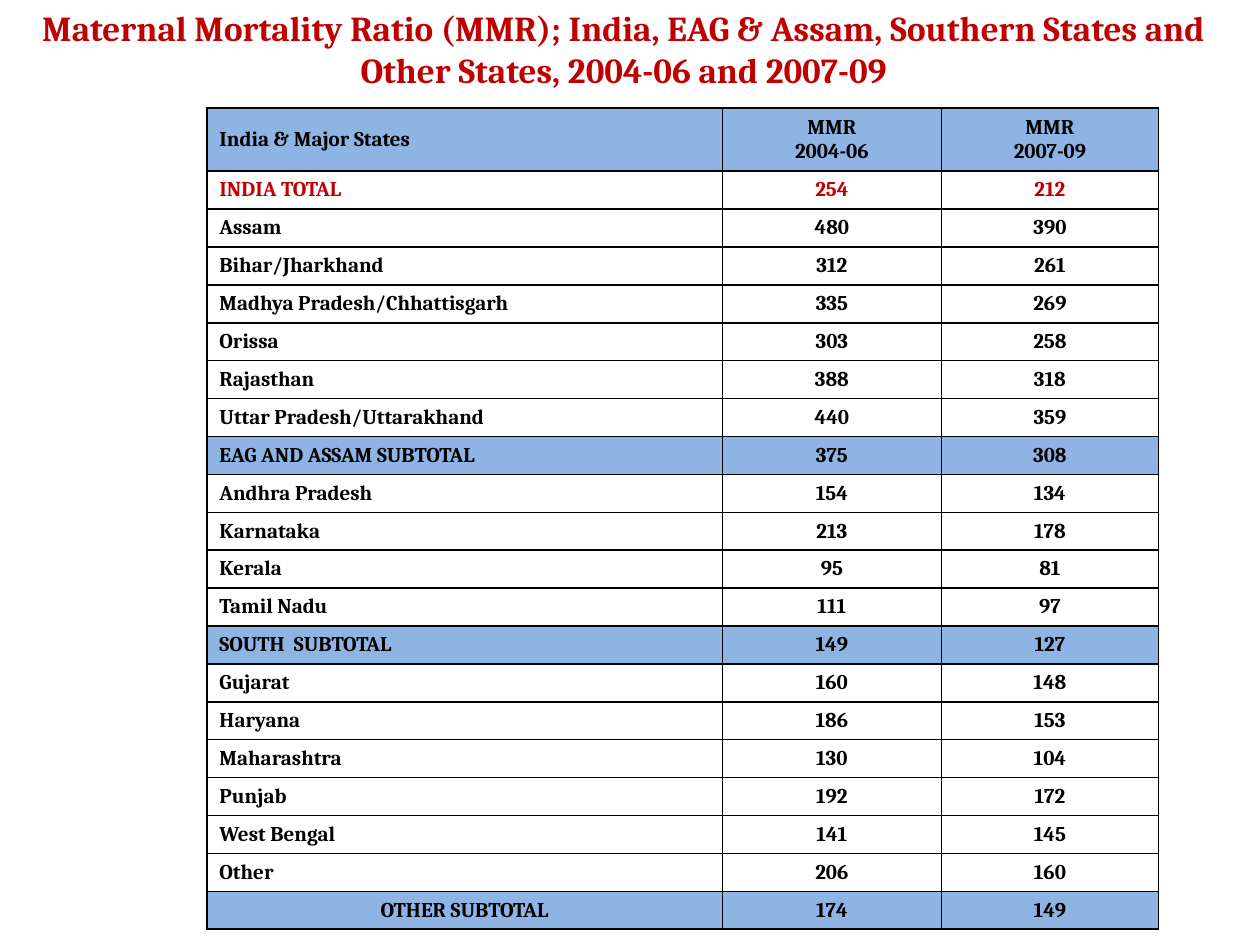
from dataclasses import dataclass

from lxml import etree
from pptx import Presentation
from pptx.dml.color import RGBColor
from pptx.enum import text
from pptx.oxml import ns
from pptx.util import Cm, Pt


@dataclass(frozen=True)
class Theme:
    font: str = "Cambria"
    title_size: int = 20
    cell_size: int = 12
    red: str = "C00000"
    ink: str = "000000"
    band: str = "8DB4E3"
    border: str = "000000"
    border_width: int = 1


@dataclass(frozen=True)
class Row:
    label: str
    earlier: str
    later: str
    banded: bool = False
    color: str = Theme.ink
    label_align: text.PP_ALIGN = text.PP_ALIGN.LEFT


THEME = Theme()
TITLE = ("Maternal Mortality Ratio (MMR); India, EAG & Assam, Southern States "
         "and Other States, 2004-06 and 2007-09")
ROWS = [
    Row("India & Major States", "MMR\n2004-06", "MMR\n2007-09", banded=True),
    Row("INDIA TOTAL", "254", "212", color=THEME.red),
    Row("Assam", "480", "390"),
    Row("Bihar/Jharkhand", "312", "261"),
    Row("Madhya Pradesh/Chhattisgarh", "335", "269"),
    Row("Orissa", "303", "258"),
    Row("Rajasthan", "388", "318"),
    Row("Uttar Pradesh/Uttarakhand", "440", "359"),
    Row("EAG AND ASSAM SUBTOTAL", "375", "308", banded=True),
    Row("Andhra Pradesh", "154", "134"),
    Row("Karnataka", "213", "178"),
    Row("Kerala", "95", "81"),
    Row("Tamil Nadu", "111", "97"),
    Row("SOUTH  SUBTOTAL", "149", "127", banded=True),
    Row("Gujarat", "160", "148"),
    Row("Haryana", "186", "153"),
    Row("Maharashtra", "130", "104"),
    Row("Punjab", "192", "172"),
    Row("West Bengal", "141", "145"),
    Row("Other", "206", "160"),
    Row("OTHER SUBTOTAL", "174", "149", banded=True,
        label_align=text.PP_ALIGN.CENTER),
]
COLUMN_WIDTHS = (10.39, 4.42, 4.37)
TABLE_HEIGHT = 16.55
HEADER_HEIGHT = 1.27


def write(frame, content: str, size: int, color: str, align: text.PP_ALIGN) -> None:
    for index, line in enumerate(content.split("\n")):
        para = frame.add_paragraph() if index else frame.paragraphs[0]
        para.alignment = align
        span = para.add_run()
        span.text = line
        span.font.name = THEME.font
        span.font.size = Pt(size)
        span.font.bold = True
        span.font.color.rgb = RGBColor.from_string(color)


def add_borders(cell) -> None:
    properties = cell._tc.get_or_add_tcPr()
    for index, side in enumerate(("lnL", "lnR", "lnT", "lnB")):
        line = etree.Element(ns.qn(f"a:{side}"), w=str(Pt(THEME.border_width)))
        fill = etree.SubElement(line, ns.qn("a:solidFill"))
        etree.SubElement(fill, ns.qn("a:srgbClr"), val=THEME.border)
        properties.insert(index, line)


def fill_row(table, index: int, row: Row) -> None:
    center = text.PP_ALIGN.CENTER
    entries = ((row.label, row.label_align), (row.earlier, center), (row.later, center))
    for column, (content, align) in enumerate(entries):
        cell = table.cell(index, column)
        cell.vertical_anchor = text.MSO_ANCHOR.MIDDLE
        if row.banded:
            cell.fill.solid()
            cell.fill.fore_color.rgb = RGBColor.from_string(THEME.band)
        else:
            cell.fill.background()
        write(cell.text_frame, content, THEME.cell_size, row.color, align)
        add_borders(cell)


def add_title(page) -> None:
    box = page.shapes.title
    box.left, box.top, box.width, box.height = Cm(0.41), Cm(0), Cm(24.33), Cm(1.96)
    frame = box.text_frame
    frame.word_wrap = True
    frame.auto_size = text.MSO_AUTO_SIZE.SHAPE_TO_FIT_TEXT
    frame.vertical_anchor = text.MSO_ANCHOR.MIDDLE
    write(frame, TITLE, THEME.title_size, THEME.red, text.PP_ALIGN.CENTER)


def add_mortality_table(page) -> None:
    table = page.shapes.add_table(
        len(ROWS), len(COLUMN_WIDTHS), Cm(4.17), Cm(2.18),
        Cm(sum(COLUMN_WIDTHS)), Cm(TABLE_HEIGHT)).table
    table.first_row = False
    table.horz_banding = False
    for column, width in zip(table.columns, COLUMN_WIDTHS):
        column.width = Cm(width)
    row_height = (TABLE_HEIGHT - HEADER_HEIGHT) / (len(ROWS) - 1)
    for index, row in enumerate(ROWS):
        table.rows[index].height = Cm(row_height if index else HEADER_HEIGHT)
        fill_row(table, index, row)


def main() -> None:
    deck = Presentation()
    deck.slide_width, deck.slide_height = Cm(25.4), Cm(19.05)
    page = deck.slides.add_slide(deck.slide_layouts[5])
    add_title(page)
    add_mortality_table(page)
    deck.save("out.pptx")


if __name__ == "__main__":
    main()
